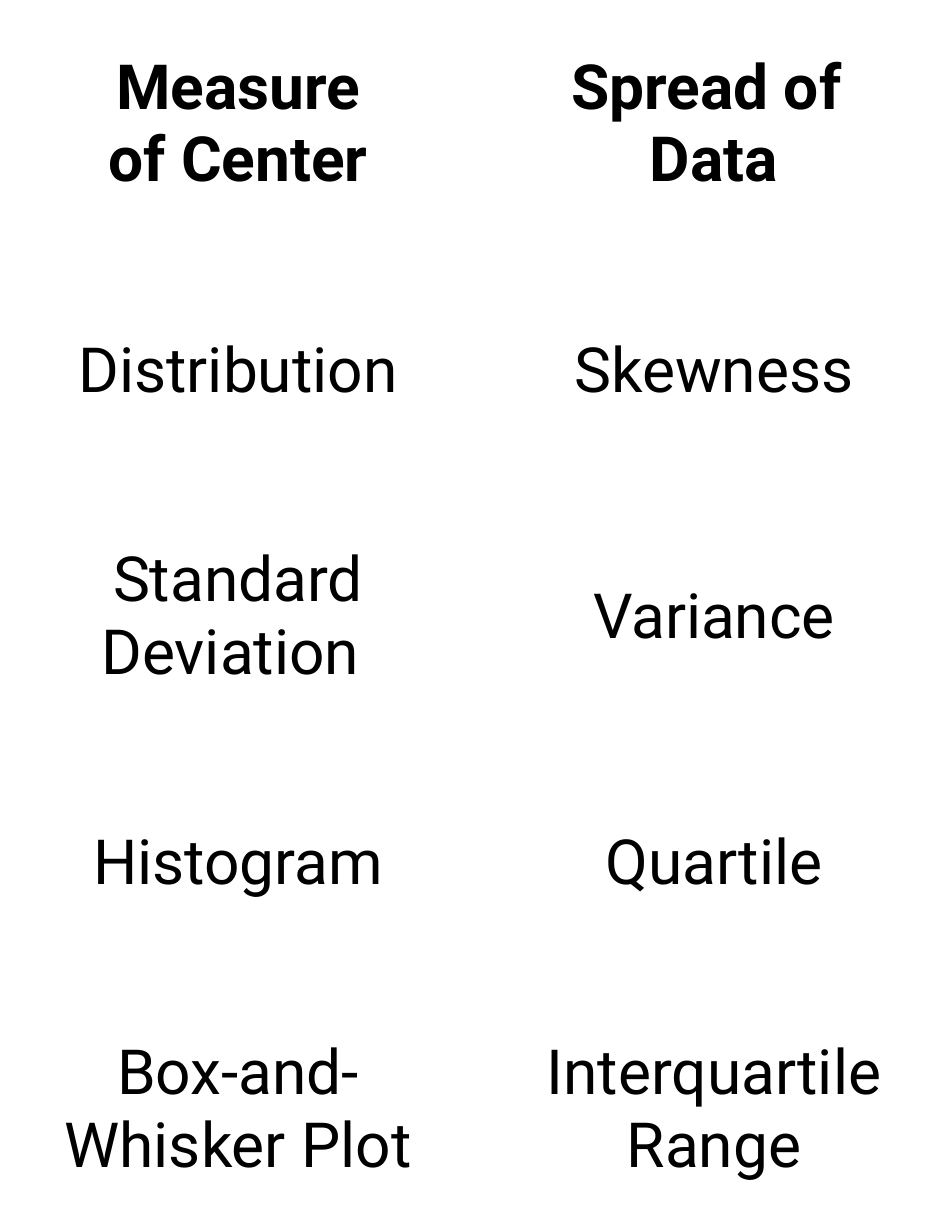
from dataclasses import dataclass

from pptx import Presentation
from pptx.dml.color import RGBColor as Rgb
from pptx.enum.text import MSO_ANCHOR as Anchor, PP_ALIGN as Align
from pptx.util import Inches, Pt


@dataclass(frozen=True)
class Theme:
    font: str = "Roboto"
    size: int = 40
    ink: str = "000000"
    paper: str = "FFFFFF"


THEME = Theme()
WIDTH, HEIGHT = 8.5, 11

TERMS = [
    ("Measure\nof Center", "Spread of \nData"),
    ("Distribution", "Skewness"),
    ("Standard\nDeviation ", "Variance"),
    ("Histogram", "Quartile"),
    ("Box-and-Whisker Plot", "Interquartile Range"),
]


def write(frame, text, size=THEME.size, color=THEME.ink, bold=False,
          align=Align.CENTER):
    para = frame.paragraphs[0]
    para.text = text
    para.alignment = align
    for run in para.runs:
        run.font.name = THEME.font
        run.font.size = Pt(size)
        run.font.bold = bold
        run.font.color.rgb = Rgb.from_string(color)


def add_cards(slide, left, top, width, height):
    rows, cols = len(TERMS), len(TERMS[0])
    table = slide.shapes.add_table(
        rows, cols, Inches(left), Inches(top), Inches(width), Inches(height)
    ).table
    table.first_row = table.horz_banding = False
    for col in table.columns:
        col.width = Inches(width / cols)
    for r, terms in enumerate(TERMS):
        table.rows[r].height = Inches(height / rows)
        for c, term in enumerate(terms):
            cell = table.cell(r, c)
            cell.fill.solid()
            cell.fill.fore_color.rgb = Rgb.from_string(THEME.paper)
            cell.vertical_anchor = Anchor.MIDDLE
            write(cell.text_frame, term, bold=r == 0)


def main():
    deck = Presentation()
    deck.slide_width, deck.slide_height = Inches(WIDTH), Inches(HEIGHT)
    slide = deck.slides.add_slide(deck.slide_layouts[6])
    add_cards(slide, 0, 0.01, WIDTH, HEIGHT)
    deck.save("out.pptx")


if __name__ == "__main__":
    main()
